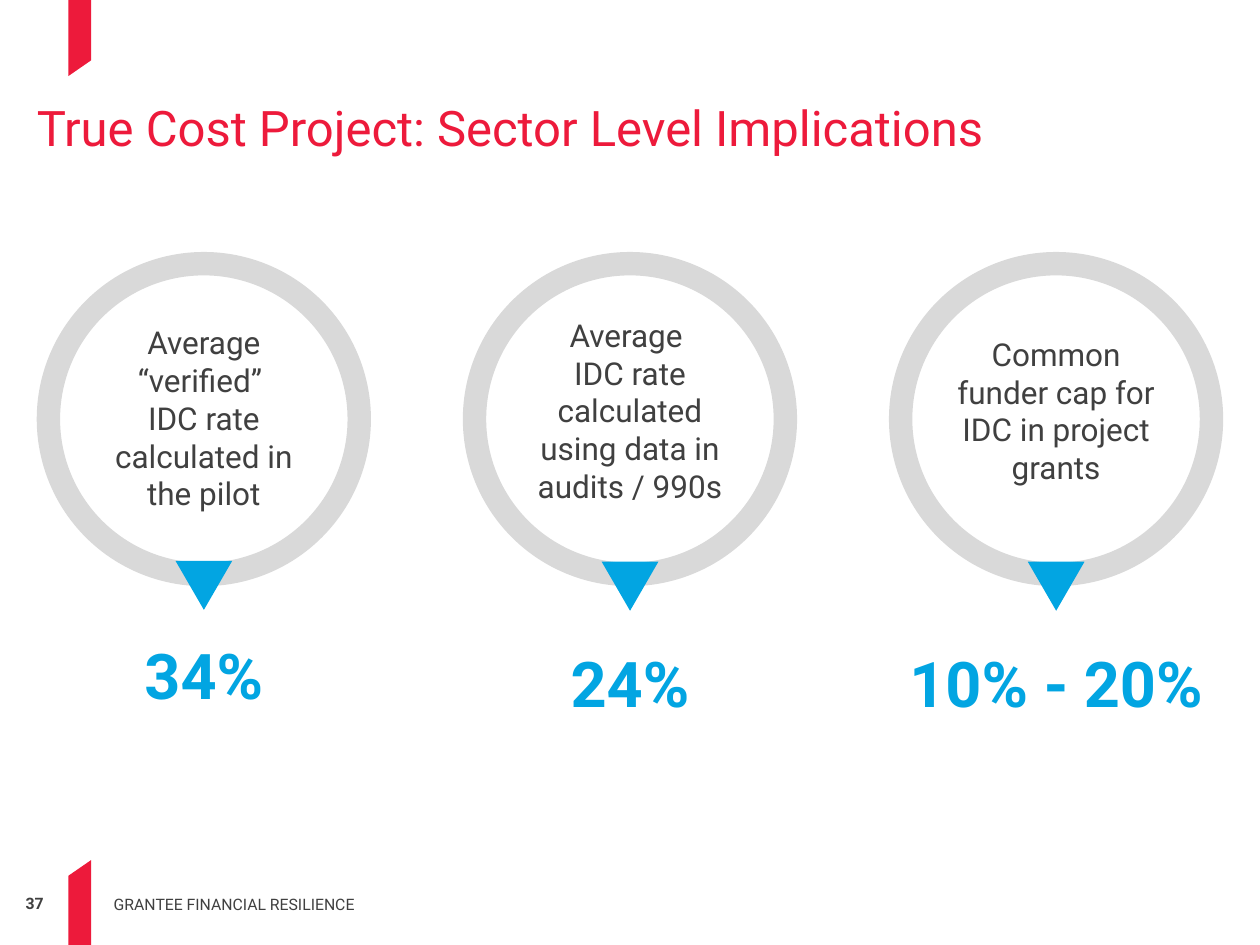
import pptx
import pptx.dml.color
import pptx.enum.shapes
import pptx.enum.text
import pptx.util

Pt = pptx.util.Pt
MSO_SHAPE = pptx.enum.shapes.MSO_SHAPE
ALIGN = pptx.enum.text.PP_ALIGN
ANCHOR = pptx.enum.text.MSO_ANCHOR
AUTO_SIZE = pptx.enum.text.MSO_AUTO_SIZE

COLORS = {"red": "ED1A3B", "blue": "02A5E2", "gray": "D9D9D9", "text": "404040"}
SLIDE_W, SLIDE_H = 720, 540
MARGIN = 21
RING = 191
RING_TOP = 144
LABEL_W, LABEL_H = 114.5, 103
POINTER_W, POINTER_H = 32.4, 28

# Label paragraphs, label top, pointer top, value, value top, value width
RATES = [
    (["Average “verified” ", "IDC rate calculated in the pilot"],
     187.2, 320.5, "34%", 360, 82),
    (["Average ", "IDC rate calculated using data in audits / 990s"],
     183, 321, "24%", 364.5, 82),
    (["Common funder cap for IDC in project grants"],
     183, 321, "10% - 20%", 364.5, RING),
]


def rgb(name):
    return pptx.dml.color.RGBColor.from_string(COLORS[name])


def set_attrs(obj, values):
    for name, value in values.items():
        setattr(obj, name, value)


def paint(sp, color):
    sp.shadow.inherit = False
    sp.fill.solid()
    sp.fill.fore_color.rgb = rgb(color)
    sp.line.fill.background()


def write(tf, lines, size, color, bold=False, align=ALIGN.LEFT,
          anchor=ANCHOR.TOP, inset=0, wrap=True, auto_size=AUTO_SIZE.NONE):
    margins = ("margin_left", "margin_top", "margin_right", "margin_bottom")
    set_attrs(tf, dict.fromkeys(margins, Pt(inset)))
    set_attrs(tf, {"word_wrap": wrap, "auto_size": auto_size,
                   "vertical_anchor": anchor})
    for i, line in enumerate(lines):
        p = tf.add_paragraph() if i else tf.paragraphs[0]
        p.alignment = align
        r = p.add_run()
        r.text = line
        set_attrs(r.font, {"name": "Roboto", "size": Pt(size), "bold": bold})
        r.font.color.rgb = rgb(color)


def add_text(s, box, lines, size, color, **options):
    sp = s.shapes.add_textbox(*map(Pt, box))
    write(sp.text_frame, lines, size, color, **options)


def add_preset(s, kind, box, color):
    sp = s.shapes.add_shape(kind, *map(Pt, box))
    paint(sp, color)
    return sp


def add_ribbon(s, points):
    start, *rest = [(Pt(x), Pt(y)) for x, y in points]
    builder = s.shapes.build_freeform(*start)
    builder.add_line_segments(rest, close=True)
    paint(builder.convert_to_shape(), "red")


def add_title(s, text):
    sp = s.shapes.title
    set_attrs(sp, {"left": Pt(MARGIN), "top": Pt(54),
                   "width": Pt(SLIDE_W - 2 * MARGIN), "height": Pt(75.5)})
    write(sp.text_frame, [text], 28, "red")
    sp.text_frame.paragraphs[0].line_spacing = 1.05


def add_rate(s, center, lines, label_top, pointer_top, value, value_top, value_w):
    """Ring with a label inside, a pointer below it and the value under that."""
    ring = add_preset(s, MSO_SHAPE.DONUT,
                      (center - RING / 2, RING_TOP, RING, RING), "gray")
    ring.adjustments[0] = 0.07
    pointer = add_preset(s, MSO_SHAPE.ISOSCELES_TRIANGLE,
                         (center - POINTER_W / 2, pointer_top, POINTER_W, POINTER_H),
                         "blue")
    pointer.rotation = 180
    add_text(s, (center - LABEL_W / 2, label_top, LABEL_W, LABEL_H), lines, 18,
             "text", align=ALIGN.CENTER, anchor=ANCHOR.MIDDLE)
    add_text(s, (center - value_w / 2, value_top, value_w, 51), [value], 36,
             "blue", bold=True, align=ALIGN.CENTER, inset=3.6,
             wrap=value_w == RING, auto_size=AUTO_SIZE.SHAPE_TO_FIT_TEXT)


def main():
    prs = pptx.Presentation()
    set_attrs(prs, {"slide_width": Pt(SLIDE_W), "slide_height": Pt(SLIDE_H)})
    s = prs.slides.add_slide(prs.slide_layouts[5])

    left, right = 39, 52
    add_ribbon(s, [(right, 34.5), (right, 0), (left, 0), (left, 43.5)])
    add_ribbon(s, [(left, 500.5), (left, SLIDE_H), (right, SLIDE_H), (right, 491.5)])
    add_title(s, "True Cost Project: Sector Level Implications")

    pitch = (SLIDE_W - 2 * MARGIN - RING) / 2
    for i, rate in enumerate(RATES):
        add_rate(s, MARGIN + RING / 2 + i * pitch, *rate)

    add_text(s, (0, 511, 25, 11), ["37"], 9, "text", bold=True, align=ALIGN.RIGHT)
    add_text(s, (65, 500.5, 250, 21.5), ["GRANTEE FINANCIAL RESILIENCE"], 9,
             "text", anchor=ANCHOR.BOTTOM)
    prs.save("out.pptx")


if __name__ == "__main__":
    main()
